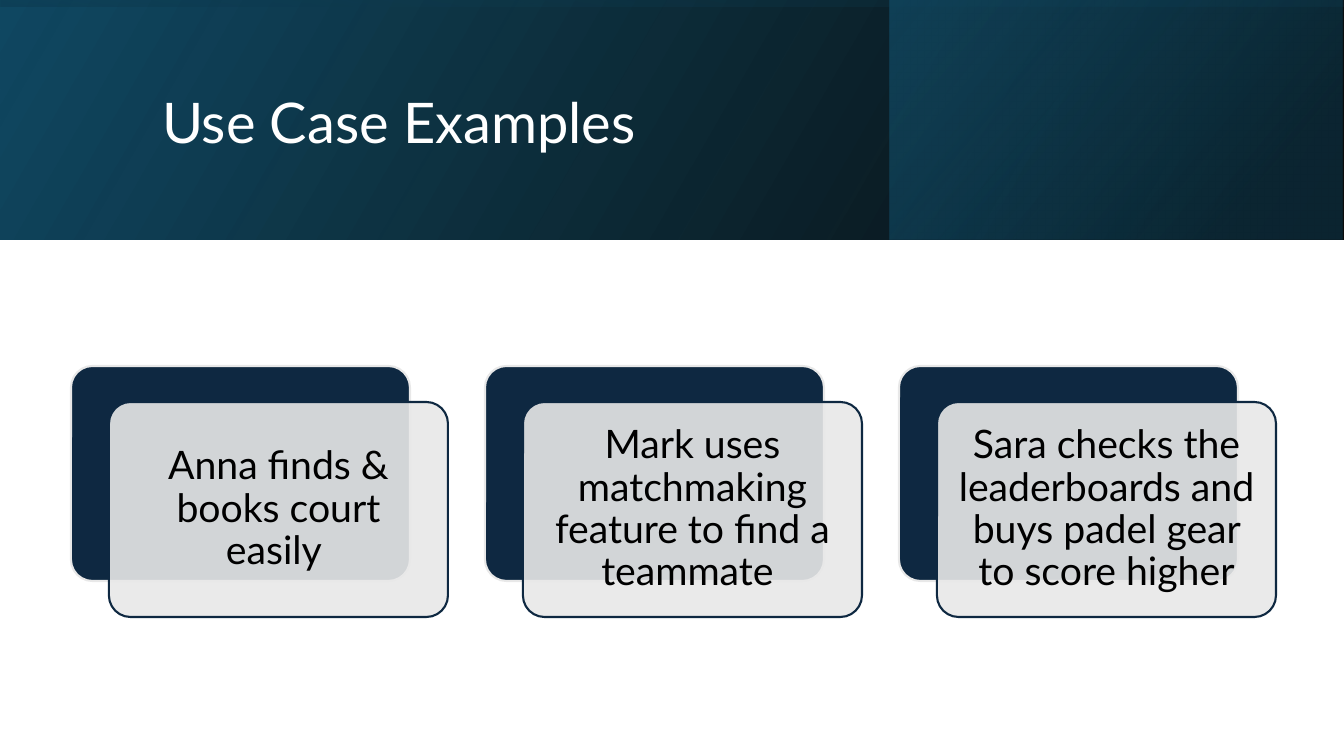
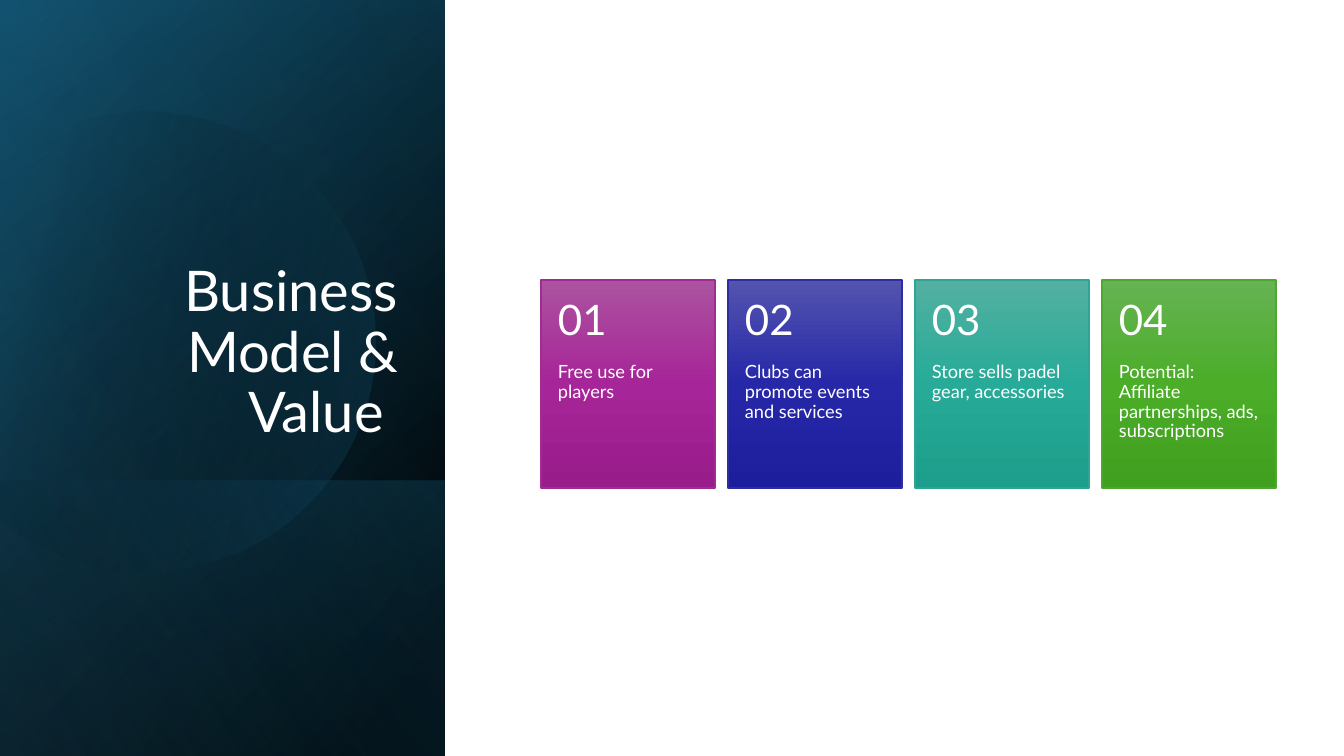
from math import cos, radians, sin

from lxml.etree import SubElement
from pptx import Presentation
from pptx.dml.color import RGBColor
from pptx.enum.shapes import MSO_SHAPE
from pptx.enum.text import MSO_ANCHOR, MSO_AUTO_SIZE, PP_ALIGN
from pptx.oxml import parse_xml
from pptx.oxml.ns import nsdecls, qn
from pptx.util import Pt

PX = 9071  # EMU per px, 100.8 px to the inch
THEME = {
    "font": "Lato",
    "title": 40, "card": 28, "number": 30, "body": 13,
    "white": "FFFFFF", "black": "000000", "navy": "0E2841", "grey": "E8E8E8",
    "blue": "104862", "teal": "156082", "sky": "46B1E1",
}


def gradient(sp, angle, stops):
    """Fill with (position, colour, opacity) stops, in percent, along an angle in degrees."""
    gs = "".join(
        f'<a:gs pos="{pos * 1000}"><a:srgbClr val="{THEME.get(colour, colour)}">'
        f'<a:alpha val="{opacity * 1000}"/></a:srgbClr></a:gs>'
        for pos, colour, opacity in stops)
    sp.fill.background()
    spPr = sp.element.spPr
    spPr.replace(spPr.find(qn("a:noFill")), parse_xml(
        f'<a:gradFill rotWithShape="1" {nsdecls("a")}><a:gsLst>{gs}</a:gsLst>'
        f'<a:lin ang="{angle * 60000}" scaled="0"/></a:gradFill>'))
    sp.shadow.inherit = False


def write(sp, text, size, colour, align, anchor, insets):
    tf = sp.text_frame
    frame = {"word_wrap": True, "auto_size": MSO_AUTO_SIZE.NONE, "vertical_anchor": anchor}
    for side, inset in zip(("left", "top", "right", "bottom"), insets):
        frame[f"margin_{side}"] = inset * PX
    for name, value in frame.items():
        setattr(tf, name, value)
    p = tf.paragraphs[0]
    p.alignment, p.line_spacing = align, 0.9
    r = p.add_run()
    r.text = text
    r.font.name, r.font.size = THEME["font"], Pt(THEME[size])
    r.font.color.rgb = RGBColor.from_string(THEME[colour])


prs = Presentation()
prs.slide_width, prs.slide_height = 1344 * PX, 756 * PX

# Each band: box, rotation, gradient angle, gradient stops
PANEL = (-156, 155, 756, 446)
PAGES = [
    {"title": "Use Case Examples", "box": (152, 39, 1072, 173),
     "align": PP_ALIGN.LEFT, "anchor": MSO_ANCHOR.MIDDLE,
     "bands": [
         ((0, 0, 1344, 240), 0, 330, [(0, "black", 96), (100, "blue", 100)]),
         ((890, 0, 453, 240), 0, 320, [(19, "0B3041", 68), (100, "teal", 48)]),
         ((552, -552, 240, 1344), 270, 350, [(23, "blue", 16), (99, "black", 45)]),
     ]},
    {"title": "Business Model & Value ", "box": (64, 186, 344, 264),
     "align": PP_ALIGN.RIGHT, "anchor": MSO_ANCHOR.BOTTOM,
     "bands": [
         (PANEL, 90, 50, [(8, "black", 100), (100, "blue", 100)]),
         (PANEL, 90, 30, [(0, "black", 0), (99, "teal", 46)]),
         ((84, 396, 276, 446), 90, 130, [(2, "teal", 29), (100, "black", 30)]),
         (PANEL, 90, 120, [(0, "black", 0), (99, "sky", 11)]),
     ]},
]
for page in PAGES:
    s = prs.slides.add_slide(prs.slide_layouts[5])
    for box, rotation, angle, stops in page["bands"]:
        band = s.shapes.add_shape(MSO_SHAPE.RECTANGLE, *(v * PX for v in box))
        band.rotation = rotation
        band.element.spPr.xfrm.set("flipH", "1")
        band.line.fill.background()
        gradient(band, angle, stops)
    title = s.shapes.title
    for name, value in zip(("left", "top", "width", "height"), page["box"]):
        setattr(title, name, value * PX)
    write(title, page["title"], "title", "white", page["align"], page["anchor"], (10, 5, 10, 5))
    band.element.addnext(title.element)
use_cases, business = prs.slides

# Use cases: a navy card behind a translucent one
CASES = [
    "Anna finds & books court easily ",
    "Mark uses matchmaking feature to find a teammate ",
    "Sara checks the leaderboards and buys padel gear to score higher",
]
for i, case in enumerate(CASES):
    x = 71 + i * 414
    for left, top, fill, line in ((x, 366, "navy", "grey"), (x + 38, 402, "grey", "navy")):
        card = use_cases.shapes.add_shape(
            MSO_SHAPE.ROUNDED_RECTANGLE, left * PX, top * PX, 339 * PX, 215 * PX)
        card.adjustments[0] = 0.1
        card.shadow.inherit = False
        card.fill.solid()
        card.fill.fore_color.rgb = RGBColor.from_string(THEME[fill])
        card.line.color.rgb = RGBColor.from_string(THEME[line])
        card.line.width = Pt(1.5)
    colour = card.element.spPr.find(qn("a:solidFill"))[0]
    SubElement(colour, qn("a:alpha"), val="90000")
    write(card, case, "card", "black", PP_ALIGN.CENTER, MSO_ANCHOR.MIDDLE, (12, 12, 12, 12))

# Business model: a disc cut off at the left, under the topmost band
CX, CY, RADIUS = 145, 337, 230
START, END = 242, 510
rim = [(round(CX + RADIUS * cos(radians(a))), round(CY + RADIUS * sin(radians(a))))
       for a in (START, 270, 360, 450, END)]
builder = business.shapes.build_freeform(*rim[0], scale=PX)
builder.add_line_segments(rim[1:], close=True)
disc = builder.convert_to_shape()
# The straight segments set the extent; one arc takes their place
chords = list(disc.element.iter(qn("a:lnTo")))
arc = {"wR": RADIUS, "hR": RADIUS, "stAng": START * 60000, "swAng": (END - START) * 60000}
curve = parse_xml(f'<a:arcTo {nsdecls("a")}/>')
for name, value in arc.items():
    curve.set(name, str(value))
chords[0].addprevious(curve)
for chord in chords:
    chord.getparent().remove(chord)
disc.rotation = 343.9
disc.line.fill.background()
gradient(disc, 30, [(29, "black", 0), (100, "teal", 43)])
band.element.addprevious(disc.element)

# Numbered tiles: text, outline, gradient from top to bottom
TILES = [
    ("Free use for players", "A02B93", ("AC53A0", "A62598", "991C8B")),
    ("Clubs can promote events and services", "2C2EA2", ("5354AE", "2628A8", "1D1E9B")),
    ("Store sells padel gear, accessories", "2DA594", ("53B0A1", "27AB98", "1D9D8B")),
    ("Potential: Affiliate partnerships, ads, subscriptions", "4EA72E",
     ("66B354", "4BAD28", "409F1E")),
]
TILE_W, TILE_H, GAP, HEAD_H = 174, 208, 13, 83
for i, (text, outline, shades) in enumerate(TILES):
    x, y = (541 + i * (TILE_W + GAP)) * PX, 280 * PX
    tile = business.shapes.add_shape(MSO_SHAPE.RECTANGLE, x, y, TILE_W * PX, TILE_H * PX)
    gradient(tile, 90, [(pos, shade, 100) for pos, shade in zip((0, 50, 100), shades)])
    tile.line.color.rgb = RGBColor.from_string(outline)
    tile.line.width = Pt(1)
    write(tile, text, "body", "white", PP_ALIGN.LEFT, MSO_ANCHOR.TOP, (17, HEAD_H, 17, 36))
    number = business.shapes.add_textbox(x, y, TILE_W * PX, HEAD_H * PX)
    write(number, f"{i + 1:02}", "number", "white", PP_ALIGN.LEFT, MSO_ANCHOR.MIDDLE,
          (17, 18, 17, 18))

prs.save("out.pptx")
